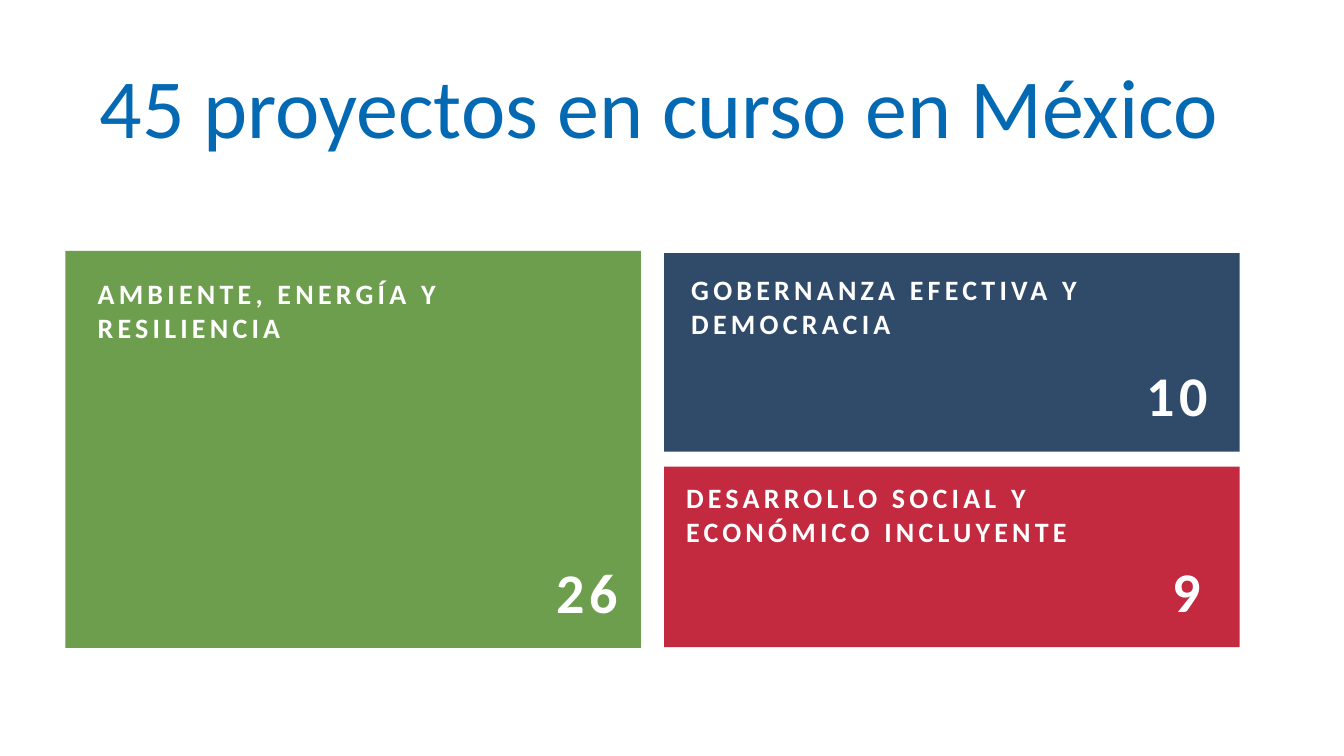
import pptx
import pptx.dml.color
import pptx.enum.shapes
import pptx.enum.text
import pptx.util

Cm = pptx.util.Cm
Pt = pptx.util.Pt
ALIGN = pptx.enum.text.PP_ALIGN
ANCHOR = pptx.enum.text.MSO_ANCHOR
FONT = "Calibri"
WHITE = "FFFFFF"
CARD_WIDTH = 14.5
LEFT_COLUMN, RIGHT_COLUMN = 1.65, 16.74

# left, top, height, colour, label, label box (x, y, width), count, count right margin
CARDS = [
    (RIGHT_COLUMN, 6.38, 5.0, "304A69", "GOBERNANZA EFECTIVA Y DEMOCRACIA",
     (0.43, 0.36, 10.69), "10", 0.56),
    (LEFT_COLUMN, 6.32, 10.01, "6D9E4E", "AMBIENTE, ENERGÍA Y RESILIENCIA",
     (0.56, 0.53, 11.35), "26", 0.33),
    (RIGHT_COLUMN, 11.76, 4.55, "C32A3F", "DESARROLLO SOCIAL Y ECONÓMICO INCLUYENTE",
     (0.3, 0.23, 10.46), "9", 0.74),
]


def color(value):
    return pptx.dml.color.RGBColor.from_string(value)


def add_spaced_text(shapes, box, text, size, alignment):
    """Add bold white text with wide letter spacing."""
    text_box = shapes.add_textbox(*(Cm(length) for length in box))
    frame = text_box.text_frame
    frame.word_wrap = True
    frame.text = text
    paragraph = frame.paragraphs[0]
    paragraph.alignment = alignment
    run = paragraph.runs[0]
    run.font.name = FONT
    run.font.size = Pt(size)
    run.font.bold = True
    run.font.color.rgb = color(WHITE)
    run._r.get_or_add_rPr().set("spc", "300")


def add_card(slide, left, top, height, fill, label, label_box, count, count_margin):
    shapes = slide.shapes.add_group_shape().shapes
    panel = shapes.add_shape(
        pptx.enum.shapes.MSO_SHAPE.RECTANGLE,
        Cm(left), Cm(top), Cm(CARD_WIDTH), Cm(height))
    panel.shadow.inherit = False
    panel.fill.solid()
    panel.fill.fore_color.rgb = color(fill)
    panel.line.fill.background()

    label_x, label_y, label_width = label_box
    add_spaced_text(shapes, (left + label_x, top + label_y, label_width, 1.96),
                    label, 20, ALIGN.LEFT)
    count_width = 3.17
    count_left = left + CARD_WIDTH - count_margin - count_width
    add_spaced_text(shapes, (count_left, top + height - 2.41, count_width, 1.96),
                    count, 40, ALIGN.RIGHT)


def set_title(slide, text, left, top, width, height):
    title = slide.shapes.title
    title.left, title.top = Cm(left), Cm(top)
    title.width, title.height = Cm(width), Cm(height)
    frame = title.text_frame
    frame.text = text
    frame.word_wrap = True
    frame.auto_size = pptx.enum.text.MSO_AUTO_SIZE.NONE
    frame.vertical_anchor = ANCHOR.MIDDLE
    paragraph = frame.paragraphs[0]
    paragraph.alignment = ALIGN.LEFT
    paragraph.line_spacing = 0.9
    font = paragraph.runs[0].font
    font.name = FONT
    font.size = Pt(60)
    font.color.rgb = color("0369B3")


def main():
    presentation = pptx.Presentation()
    presentation.slide_width = Cm(33.87)
    presentation.slide_height = Cm(19.05)
    slide = presentation.slides.add_slide(presentation.slide_layouts[5])
    set_title(slide, "45 proyectos en curso en México", 2.26, 1.3, 30.48, 3)
    for card in CARDS:
        add_card(slide, *card)
    presentation.save("out.pptx")


if __name__ == "__main__":
    main()
